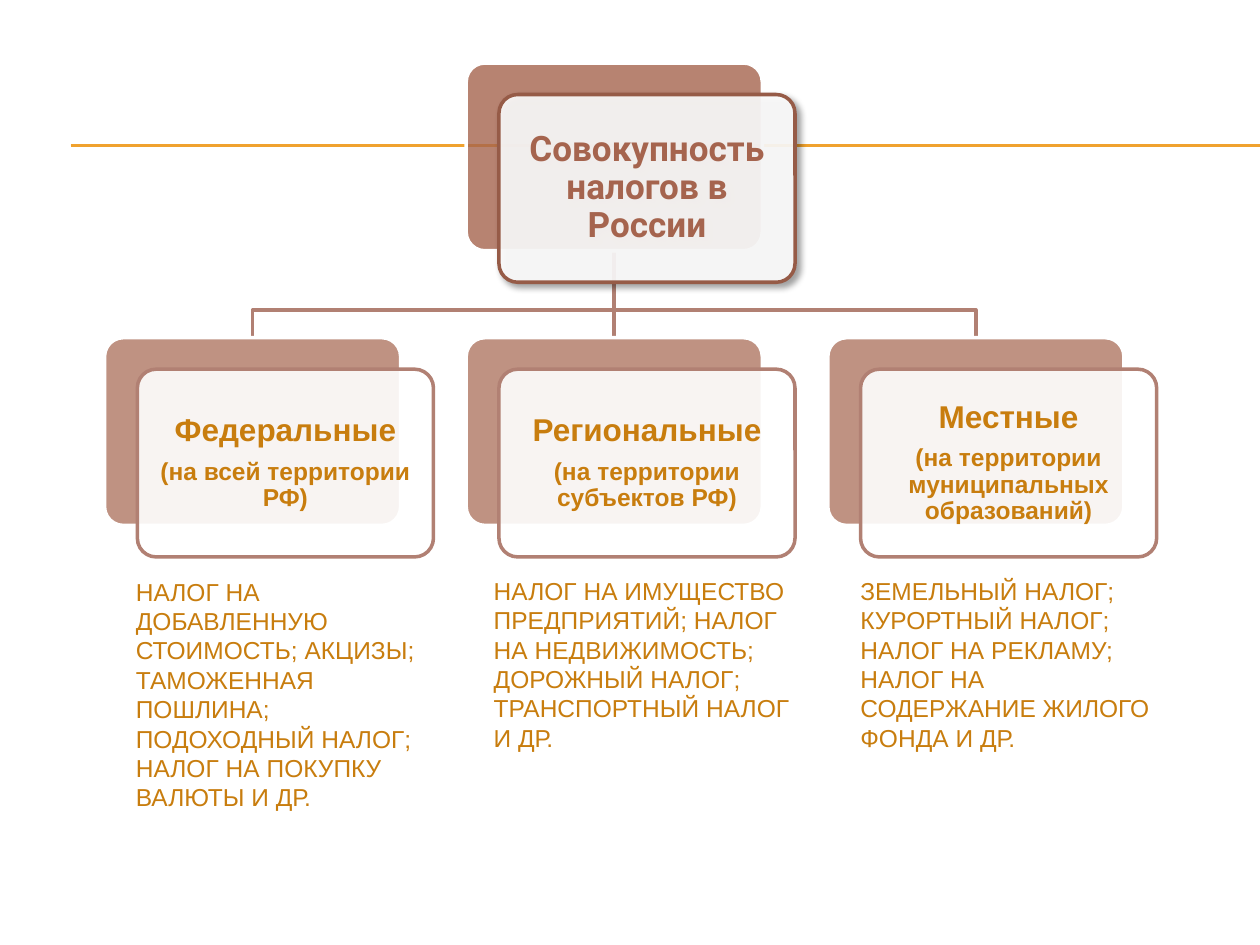
from lxml.etree import SubElement
from pptx import Presentation
from pptx.dml.color import RGBColor
from pptx.enum.shapes import MSO_CONNECTOR, MSO_SHAPE
from pptx.enum.text import MSO_ANCHOR, PP_ALIGN
from pptx.oxml.ns import qn
from pptx.util import Inches, Pt

ROOT = "Совокупность налогов в России"
BRANCHES = [
    {
        "title": "Федеральные",
        "scope": "(на всей территории РФ)",
        "taxes": "НАЛОГ НА ДОБАВЛЕННУЮ СТОИМОСТЬ; АКЦИЗЫ; ТАМОЖЕННАЯ ПОШЛИНА; "
                 "ПОДОХОДНЫЙ НАЛОГ; НАЛОГ НА ПОКУПКУ ВАЛЮТЫ И ДР.",
        "taxes_at": (0.98, 3.99),
    },
    {
        "title": "Региональные",
        "scope": "(на территории субъектов РФ)",
        "taxes": "НАЛОГ НА ИМУЩЕСТВО ПРЕДПРИЯТИЙ; НАЛОГ НА НЕДВИЖИМОСТЬ; "
                 "ДОРОЖНЫЙ НАЛОГ; ТРАНСПОРТНЫЙ НАЛОГ И ДР.",
        "taxes_at": (3.82, 3.75),
    },
    {
        "title": "Местные",
        "scope": "(на территории муниципальных образований)",
        "taxes": "ЗЕМЕЛЬНЫЙ НАЛОГ; КУРОРТНЫЙ НАЛОГ; НАЛОГ НА РЕКЛАМУ; "
                 "НАЛОГ НА СОДЕРЖАНИЕ ЖИЛОГО ФОНДА И ДР.",
        "taxes_at": (6.73, 3.75),
    },
]
THEME = {
    "rule": "F0A22E", "brown": "A5644E", "root_line": "965B47",
    "branch_line": "B18073", "text": "C87D0E", "white": "FFFFFF",
    "font": "Arial", "root_font": "Roboto",
    "root_size": 20, "title_size": 18, "body_size": 14,
    "rule_width": 0.75, "line_width": 2,
}
CARD_W, CARD_H = 2.35, 1.49
CARD_SHIFT = 0.26, 0.25
LEFT, PITCH = 0.83, 2.87
ROOT_TOP, BRANCH_TOP, BUS_Y = 0.5, 2.68, 2.46
TAXES_W, TAXES_H = 2.6, 3.04


def set_line(line, color, width):
    line.color.rgb = RGBColor.from_string(THEME[color])
    line.width = Pt(width)


def add_line(s, x1, y1, x2, y2, color, width):
    c = s.shapes.add_connector(
        MSO_CONNECTOR.STRAIGHT, Inches(x1), Inches(y1), Inches(x2), Inches(y2))
    set_line(c.line, color, width)
    SubElement(c._element.spPr, qn("a:effectLst"))
    return c


def add_elbow(s, points):
    start, *rest = [(Inches(x), Inches(y)) for x, y in points]
    fb = s.shapes.build_freeform(*start)
    fb.add_line_segments(rest, close=False)
    sp = fb.convert_to_shape()
    sp.shadow.inherit = False
    sp.fill.background()
    set_line(sp.line, "branch_line", THEME["line_width"])


def add_box(s, x, y, fill, opacity, line):
    sp = s.shapes.add_shape(MSO_SHAPE.ROUNDED_RECTANGLE, Inches(x), Inches(y),
                            Inches(CARD_W), Inches(CARD_H))
    sp.adjustments[0] = 0.1
    sp.shadow.inherit = False
    sp.fill.solid()
    sp.fill.fore_color.rgb = RGBColor.from_string(THEME[fill])
    color = sp._element.spPr.find(qn("a:solidFill")).find(qn("a:srgbClr"))
    SubElement(color, qn("a:alpha"), val=str(opacity * 1000))
    set_line(sp.line, line, THEME["line_width"])
    return sp


def add_shadow(sp):
    effects = sp._element.spPr.find(qn("a:effectLst"))
    shadow = SubElement(effects, qn("a:outerShdw"), blurRad=str(Pt(4)),
                        dist=str(Pt(3)), dir="2700000", rotWithShape="0")
    color = SubElement(shadow, qn("a:srgbClr"), val="000000")
    SubElement(color, qn("a:alpha"), val="40000")


def write(tf, lines, font, color, bold):
    tf.word_wrap = True
    tf.vertical_anchor = MSO_ANCHOR.MIDDLE
    tf.text = "\n".join(text for text, size in lines)
    for p, (text, size) in zip(tf.paragraphs, lines):
        f = p.runs[0].font
        f.name, f.size, f.bold = THEME[font], Pt(THEME[size]), bold
        f.color.rgb = RGBColor.from_string(THEME[color])


def add_card(s, x, y, opacity, line, lines, font, color):
    back = add_box(s, x, y, "brown", opacity, "white")
    front = add_box(s, x + CARD_SHIFT[0], y + CARD_SHIFT[1], "white", 90, line)
    tf = front.text_frame
    tf.margin_left = tf.margin_right = Inches(0.03)
    tf.margin_top = tf.margin_bottom = Inches(0.03)
    write(tf, lines, font, color, True)
    for p, (text, size) in zip(tf.paragraphs, lines):
        p.alignment = PP_ALIGN.CENTER
        p.line_spacing = 0.9
        p.space_after = Pt(round(THEME[size] * 0.35, 1))
    return back, front


def main():
    prs = Presentation()
    prs.slide_width, prs.slide_height = Inches(10), Inches(7.5)
    s = prs.slides.add_slide(prs.slide_layouts[6])

    for y in (1.15, 1.16):
        add_line(s, 0.56, y, 10, y, "rule", THEME["rule_width"])

    lefts = [LEFT + i * PITCH for i in range(len(BRANCHES))]
    centers = [x + CARD_W / 2 for x in lefts]
    root_x, root_bottom = centers[1], ROOT_TOP + CARD_H
    for x in (centers[2], centers[0]):
        add_elbow(s, [(root_x, root_bottom), (root_x, BUS_Y),
                      (x, BUS_Y), (x, BRANCH_TOP)])
    stem = add_line(s, root_x, root_bottom, root_x, BRANCH_TOP,
                    "branch_line", THEME["line_width"])

    root, front = add_card(s, lefts[1], ROOT_TOP, 80, "root_line",
                           [(ROOT, "root_size")], "root_font", "brown")
    add_shadow(front)
    backs = []
    for x, b in zip(lefts, BRANCHES):
        lines = [(b["title"], "title_size"), (b["scope"], "body_size")]
        back, front = add_card(s, x, BRANCH_TOP, 70, "branch_line",
                               lines, "font", "text")
        backs.append(back)
    stem.begin_connect(root, 2)
    stem.end_connect(backs[1], 0)

    for b in BRANCHES:
        x, y = b["taxes_at"]
        tb = s.shapes.add_textbox(Inches(x), Inches(y),
                                  Inches(TAXES_W), Inches(TAXES_H))
        write(tb.text_frame, [(b["taxes"], "body_size")], "font", "text", False)

    prs.save("out.pptx")


if __name__ == "__main__":
    main()
